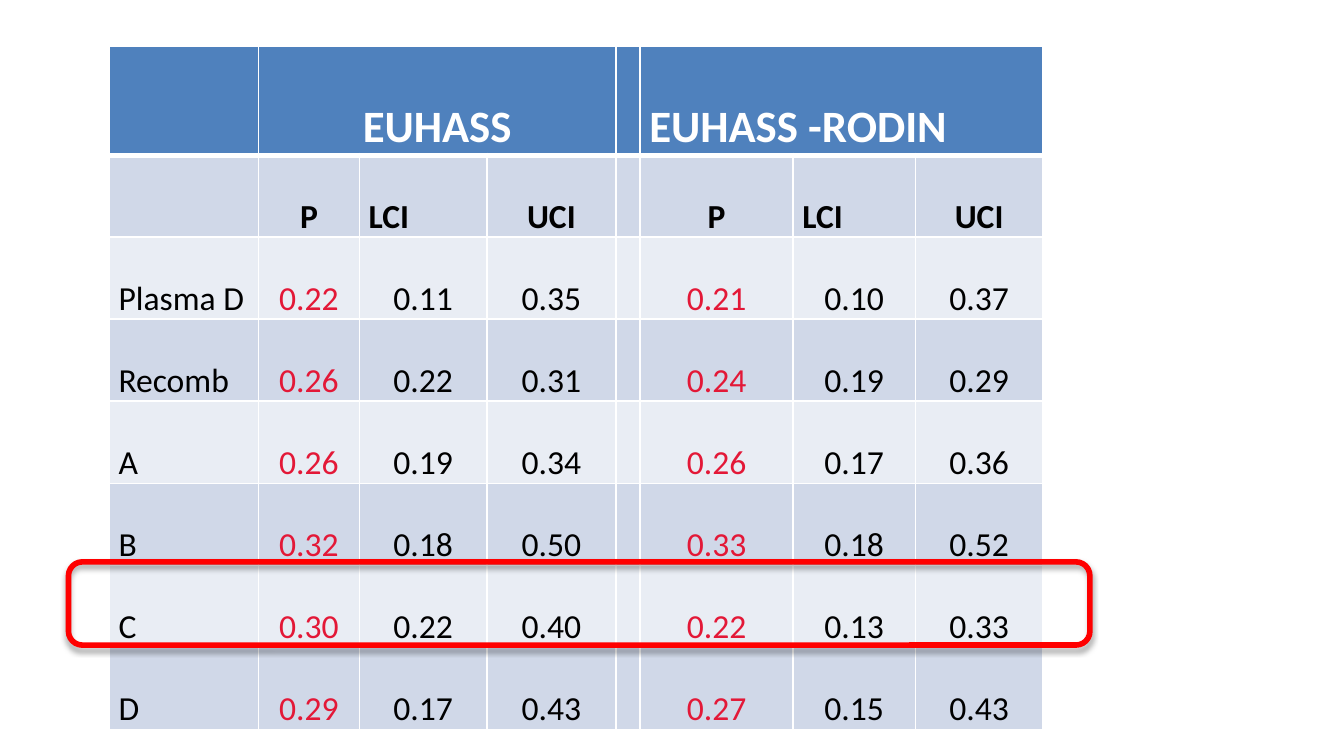
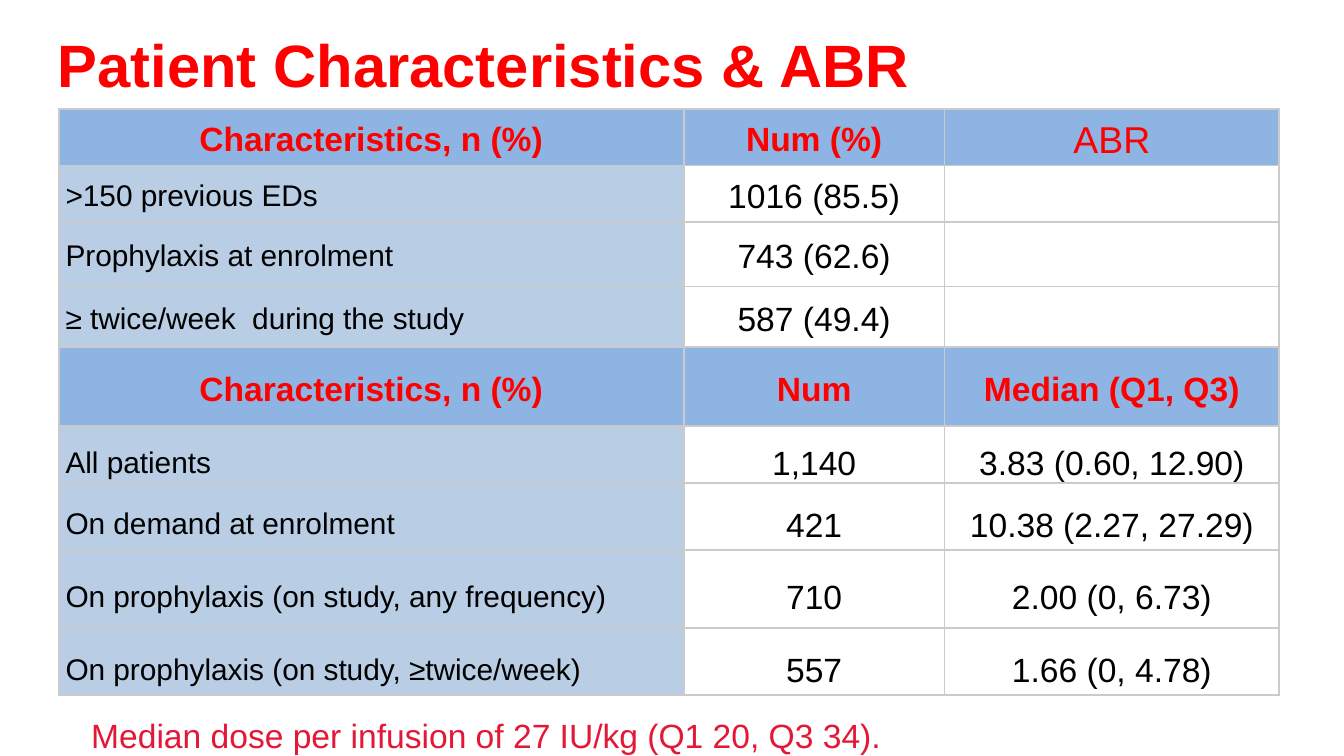
from dataclasses import dataclass
from lxml import etree
from pptx import Presentation
from pptx.dml.color import RGBColor
from pptx.enum.shapes import MSO_SHAPE
from pptx.enum.text import MSO_ANCHOR, PP_ALIGN
from pptx.oxml import parse_xml
from pptx.oxml.ns import nsdecls, qn
from pptx.util import Pt

LEFT, CENTER = PP_ALIGN.LEFT, PP_ALIGN.CENTER
TOP, MIDDLE = MSO_ANCHOR.TOP, MSO_ANCHOR.MIDDLE
ROUNDED = MSO_SHAPE.ROUNDED_RECTANGLE
BLANK_LAYOUT = 6


@dataclass(frozen=True)
class Theme:
    white: str = "FFFFFF"
    black: str = "000000"
    red: str = "FF0000"
    crimson: str = "E31837"
    header_blue: str = "4F81BD"
    dark_band: str = "D0D8E8"
    light_band: str = "E9EDF4"
    section_blue: str = "8EB4E3"
    label_blue: str = "B9CDE5"
    grid_grey: str = "CBCBCB"
    rates_font: str = "Calibri"
    text_font: str = "Arial"
    title_size: int = 32
    group_size: int = 24
    abr_size: int = 20
    body_size: int = 18
    label_size: int = 16


theme = Theme()


def write_text(frame, text, font, size, colour, bold=False, align=LEFT, spacing=None):
    para = frame.paragraphs[0]
    para.text = text
    para.alignment = align
    if spacing:
        para.line_spacing = spacing
    para.font.name = font
    para.font.size = Pt(size)
    para.font.bold = bold
    para.font.color.rgb = RGBColor.from_string(colour)


def format_cell(cell, fill, inset, anchor, line, top=1, bottom=1):
    cell.fill.solid()
    cell.fill.fore_color.rgb = RGBColor.from_string(fill)
    cell.margin_left = cell.margin_right = Pt(inset)
    cell.margin_top = cell.margin_bottom = 0
    cell.vertical_anchor = anchor
    properties = cell._tc.get_or_add_tcPr()
    sides = (("lnL", 1), ("lnR", 1), ("lnT", top), ("lnB", bottom))
    for position, (side, width) in enumerate(sides):
        border = etree.Element(qn(f"a:{side}"), w=str(Pt(width)))
        solid = etree.SubElement(border, qn("a:solidFill"))
        etree.SubElement(solid, qn("a:srgbClr"), val=line)
        properties.insert(position, border)


deck = Presentation()
deck.slide_width, deck.slide_height = Pt(720), Pt(405)

rates_columns = [80, 54, 68.4, 69, 13, 82, 65.5, 68.4]
rates_rows = [26.6] + [29.5] * 7
rates = [
    ["", "EUHASS", "", "", "", "EUHASS -RODIN", "", ""],
    ["", "P", "LCI", "UCI", "", "P", "LCI", "UCI"],
    ["Plasma D", "0.22", "0.11", "0.35", "", "0.21", "0.10", "0.37"],
    ["Recomb", "0.26", "0.22", "0.31", "", "0.24", "0.19", "0.29"],
    ["A", "0.26", "0.19", "0.34", "", "0.26", "0.17", "0.36"],
    ["B", "0.32", "0.18", "0.50", "", "0.33", "0.18", "0.52"],
    ["C", "0.30", "0.22", "0.40", "", "0.22", "0.13", "0.33"],
    ["D", "0.29", "0.17", "0.43", "", "0.27", "0.15", "0.43"],
]

abr_columns = [334.8, 139.7, 179.3]
abr_rows = [30.2, 30.2, 34.6, 32.4, 42.5, 30.2, 36, 41.8, 36]
abr = [
    ["Characteristics, n (%)", "Num (%)", "ABR"],
    [">150 previous EDs", "1016 (85.5)", ""],
    ["Prophylaxis at enrolment", "743 (62.6)", ""],
    ["≥ twice/week  during the study", "587 (49.4)", ""],
    ["Characteristics, n (%)", "Num", "Median (Q1, Q3)"],
    ["All patients", "1,140", "3.83 (0.60, 12.90)"],
    ["On demand at enrolment", "421", "10.38 (2.27, 27.29)"],
    ["On prophylaxis (on study, any frequency)", "710", "2.00 (0, 6.73)"],
    ["On prophylaxis (on study, ≥twice/week)", "557", "1.66 (0, 4.78)"],
]

pages, tables = [], []
for columns, rows, left, top, height in (
    (rates_columns, rates_rows, 58.5, 24.5, 360),
    (abr_columns, abr_rows, 31.5, 58.5, 315.4),
):
    page = deck.slides.add_slide(deck.slide_layouts[BLANK_LAYOUT])
    frame = page.shapes.add_table(
        len(rows), len(columns), Pt(left), Pt(top), Pt(sum(columns)), Pt(height)
    )
    table = frame.table
    table.first_row = table.horz_banding = False
    for column, width in zip(table.columns, columns):
        column.width = Pt(width)
    for row, row_height in zip(table.rows, rows):
        row.height = Pt(row_height)
    frame.height = Pt(height)
    pages.append(page)
    tables.append(table)

rates_page, abr_page = pages
rates_table, abr_table = tables

for first in (1, 5):
    rates_table.cell(0, first).merge(rates_table.cell(0, first + 2))
for r, values in enumerate(rates):
    for c, text in enumerate(values):
        cell = rates_table.cell(r, c)
        band = theme.dark_band if r % 2 else theme.light_band
        format_cell(
            cell,
            band if r else theme.header_blue,
            5,
            MIDDLE if r else TOP,
            theme.white,
            top=3 if r == 1 else 1,
            bottom=1 if r else 3,
        )
        if not text:
            continue
        colour = theme.black if r else theme.white
        if r > 1 and c in (1, 5):
            colour = theme.crimson
        left_aligned = c == 0 or text in ("LCI", "EUHASS -RODIN")
        write_text(
            cell.text_frame,
            text,
            theme.rates_font,
            theme.body_size if r else theme.group_size,
            colour,
            bold=r < 2,
            align=LEFT if left_aligned else CENTER,
            spacing=2.0,
        )

highlight = rates_page.shapes.add_shape(ROUNDED, Pt(36.7), Pt(301), Pt(547.2), Pt(44.6))
highlight.fill.background()
highlight.line.color.rgb = RGBColor.from_string(theme.red)
highlight.line.width = Pt(3)
highlight.shadow.inherit = False
highlight._element.spPr.find(qn("a:effectLst")).append(parse_xml(
    f'<a:outerShdw {nsdecls("a")} blurRad="{Pt(3.1)}" dist="{Pt(1.8)}" dir="5400000" rotWithShape="0">'
    f'<a:srgbClr val="{theme.black}"><a:alpha val="35000"/></a:srgbClr></a:outerShdw>'
))

for r, values in enumerate(abr):
    heading = r in (0, 4)
    for c, text in enumerate(values):
        cell = abr_table.cell(r, c)
        fill = theme.section_blue if heading else theme.white if c else theme.label_blue
        format_cell(cell, fill, 3.6, MIDDLE, theme.grid_grey)
        if not text:
            continue
        label = c == 0 and not heading
        size = theme.label_size if label else theme.body_size
        write_text(
            cell.text_frame,
            text,
            theme.text_font,
            theme.abr_size if text == "ABR" else size,
            theme.red if heading else theme.black,
            bold=heading and text != "ABR",
            align=LEFT if label else CENTER,
            spacing=1.5 if r > 4 else 1.15,
        )

title = abr_page.shapes.add_textbox(Pt(31), Pt(10), Pt(637), Pt(48)).text_frame
title.word_wrap = True
title.vertical_anchor = MIDDLE
title.margin_left = title.margin_right = title.margin_top = title.margin_bottom = 0
write_text(title, "Patient Characteristics & ABR", theme.text_font, theme.title_size, theme.red, bold=True)

note = abr_page.shapes.add_textbox(Pt(41.8), Pt(379.4), Pt(573), Pt(29)).text_frame
note.word_wrap = True
write_text(
    note,
    "Median dose per infusion of 27 IU/kg (Q1 20, Q3 34).",
    theme.text_font,
    theme.body_size,
    theme.crimson,
)

deck.save("out.pptx")
